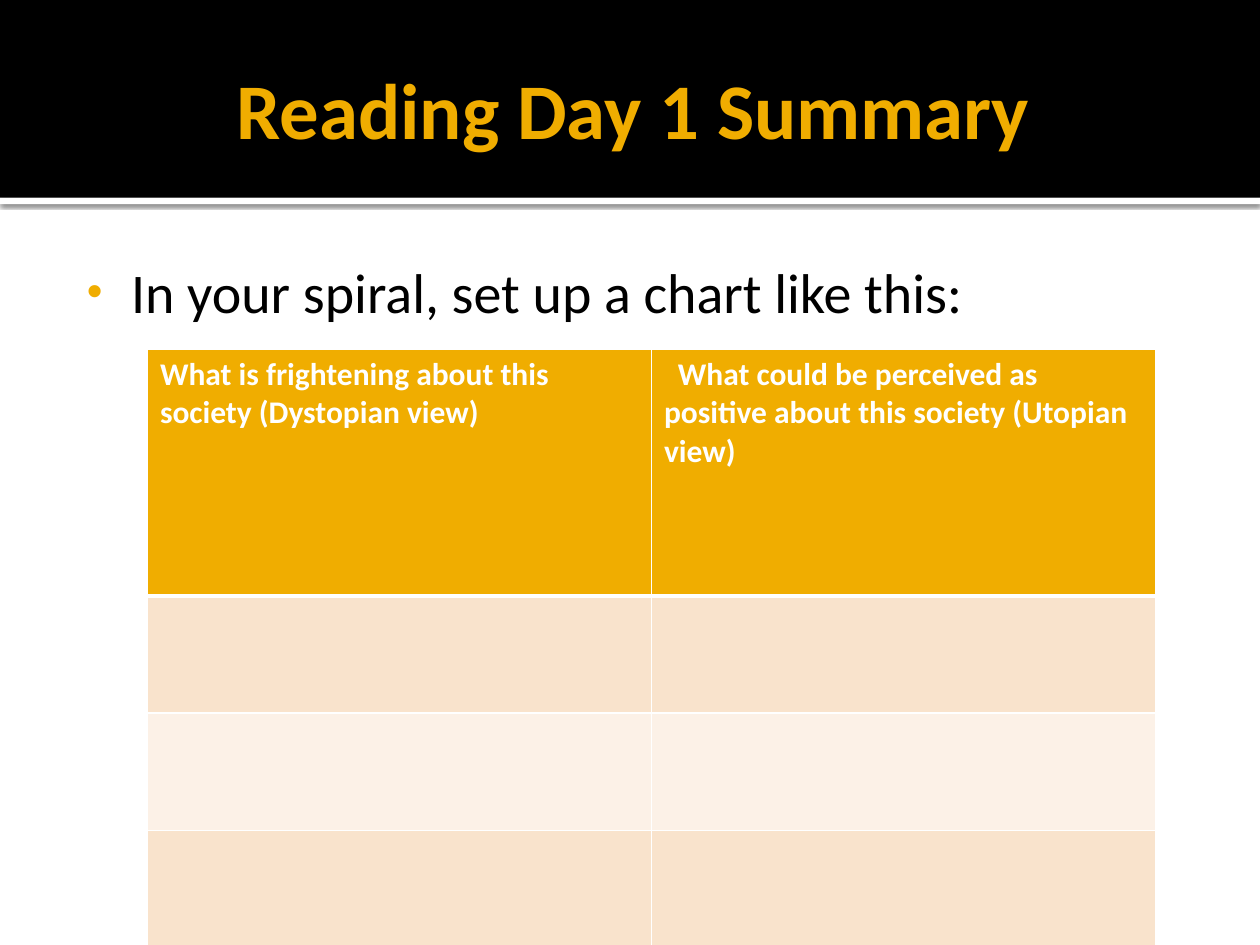
"""Build the reading summary slide with a two-column note-taking chart."""
import dataclasses

import lxml.etree
import pptx
import pptx.dml.color
import pptx.enum.shapes
import pptx.enum.text
import pptx.oxml.ns
import pptx.util


@dataclasses.dataclass(frozen=True)
class Theme:
    font: str = "Calibri"
    accent: str = "F0AD00"
    black: str = "000000"
    white: str = "FFFFFF"
    bands: tuple = ("F9E3CC", "FCF1E7")
    title_size: int = 45
    body_size: int = 32
    table_size: int = 18


THEME = Theme()
TITLE = "Reading Day 1 Summary"
INSTRUCTION = "In your spiral, set up a chart like this:"
HEADERS = [
    ("What is frightening about this society (Dystopian view)", 0),
    ("What could be perceived as positive about this society (Utopian view)", 0.11),
]
BLANK_ROWS = 3

WIDTH, HEIGHT = 10, 7.5
MARGIN = WIDTH / 20
BANNER_HEIGHT, RULE_HEIGHT = 1.57, 0.05
TABLE_LEFT, TABLE_TOP, TABLE_WIDTH = 1.17, 2.77, 8
HEADER_HEIGHT, ROW_HEIGHT = 1.96, 0.93
THIN, THICK = 1, 3


def inches(*values):
    return [pptx.util.Inches(value) for value in values]


def color(value):
    return pptx.dml.color.RGBColor.from_string(value)


def add_xml(parent, tag, **attributes):
    return lxml.etree.SubElement(parent, pptx.oxml.ns.qn(tag), attributes)


def paint(fill, value):
    fill.solid()
    fill.fore_color.rgb = color(value)


def style(paragraph, size, value, bold=False):
    font = paragraph.font
    font.name, font.size, font.bold = THEME.font, pptx.util.Pt(size), bold
    font.color.rgb = color(value)


def indent(paragraph, first_line, left=0):
    properties = paragraph._p.get_or_add_pPr()
    properties.set("marL", str(pptx.util.Inches(left)))
    properties.set("indent", str(pptx.util.Inches(first_line)))
    return properties


def add_bar(slide, top, height, value):
    bar = slide.shapes.add_shape(
        pptx.enum.shapes.MSO_SHAPE.RECTANGLE, *inches(0, top, WIDTH, height))
    bar.shadow.inherit = False
    bar.line.fill.background()
    paint(bar.fill, value)
    slide.shapes.title.element.addprevious(bar.element)
    return bar


def add_banner(slide):
    rule = add_bar(slide, BANNER_HEIGHT, RULE_HEIGHT, THEME.white)
    effects = rule.element.spPr.find(pptx.oxml.ns.qn("a:effectLst"))
    shadow = add_xml(effects, "a:outerShdw", blurRad=str(pptx.util.Pt(2.5)),
                     dist=str(pptx.util.Pt(0.8)), dir="5400000", rotWithShape="0")
    add_xml(add_xml(shadow, "a:srgbClr", val=THEME.black), "a:alpha", val="60000")
    add_bar(slide, 0, BANNER_HEIGHT, THEME.black)


def fill_placeholder(shape, text, box, insets, anchor):
    shape.left, shape.top, shape.width, shape.height = inches(*box)
    frame = shape.text_frame
    frame.text = text
    frame.word_wrap = True
    frame.auto_size = pptx.enum.text.MSO_AUTO_SIZE.NONE
    frame.vertical_anchor = anchor
    (frame.margin_left, frame.margin_top,
     frame.margin_right, frame.margin_bottom) = inches(*insets)
    paragraph = frame.paragraphs[0]
    paragraph.space_before = pptx.util.Pt(0)
    return paragraph


def add_text(slide):
    anchors = pptx.enum.text.MSO_ANCHOR
    content_width = WIDTH - 2 * MARGIN
    title = fill_placeholder(
        slide.shapes.title, TITLE, (MARGIN, 0.17, content_width, 1.37),
        (0.1, 0.05, 0.05, 0.05), anchors.MIDDLE)
    title.alignment = pptx.enum.text.PP_ALIGN.CENTER
    style(title, THEME.title_size, THEME.accent, bold=True)

    body = fill_placeholder(
        slide.placeholders[1], INSTRUCTION, (MARGIN, 1.94, content_width, 5.06),
        (0.06, 0.1, 0.1, 0.05), anchors.TOP)
    style(body, THEME.body_size, THEME.black)
    properties = indent(body, -0.35, left=0.48)
    bullet_color = add_xml(properties, "a:buClr")
    add_xml(bullet_color, "a:srgbClr", val=THEME.accent)
    add_xml(properties, "a:buSzPct", val="80000")
    add_xml(properties, "a:buFont", typeface="Arial")
    add_xml(properties, "a:buChar", char="•")
    properties.append(properties.find(pptx.oxml.ns.qn("a:defRPr")))


def set_borders(cell, row):
    properties = cell._tc.get_or_add_tcPr()
    widths = {"L": THIN, "R": THIN,
              "T": THICK if row == 1 else THIN,
              "B": THICK if row == 0 else THIN}
    for side, width in widths.items():
        line = add_xml(properties, f"a:ln{side}", w=str(pptx.util.Pt(width)))
        add_xml(add_xml(line, "a:solidFill"), "a:srgbClr", val=THEME.white)


def add_chart_table(slide):
    heights = [HEADER_HEIGHT] + [ROW_HEIGHT] * BLANK_ROWS
    table = slide.shapes.add_table(
        len(heights), len(HEADERS),
        *inches(TABLE_LEFT, TABLE_TOP, TABLE_WIDTH, sum(heights))).table
    for row, height in enumerate(heights):
        table.rows[row].height = pptx.util.Inches(height)
        fill = THEME.bands[(row - 1) % 2] if row else THEME.accent
        for cell in table.rows[row].cells:
            set_borders(cell, row)
            paint(cell.fill, fill)
    for column, (text, first_line) in enumerate(HEADERS):
        cell = table.cell(0, column)
        cell.text = text
        paragraph = cell.text_frame.paragraphs[0]
        indent(paragraph, first_line)
        style(paragraph, THEME.table_size, THEME.white, bold=True)


def main():
    presentation = pptx.Presentation()
    presentation.slide_width, presentation.slide_height = inches(WIDTH, HEIGHT)
    slide = presentation.slides.add_slide(presentation.slide_layouts[1])
    paint(slide.background.fill, THEME.white)
    add_banner(slide)
    add_text(slide)
    add_chart_table(slide)
    presentation.save("out.pptx")


if __name__ == "__main__":
    main()
